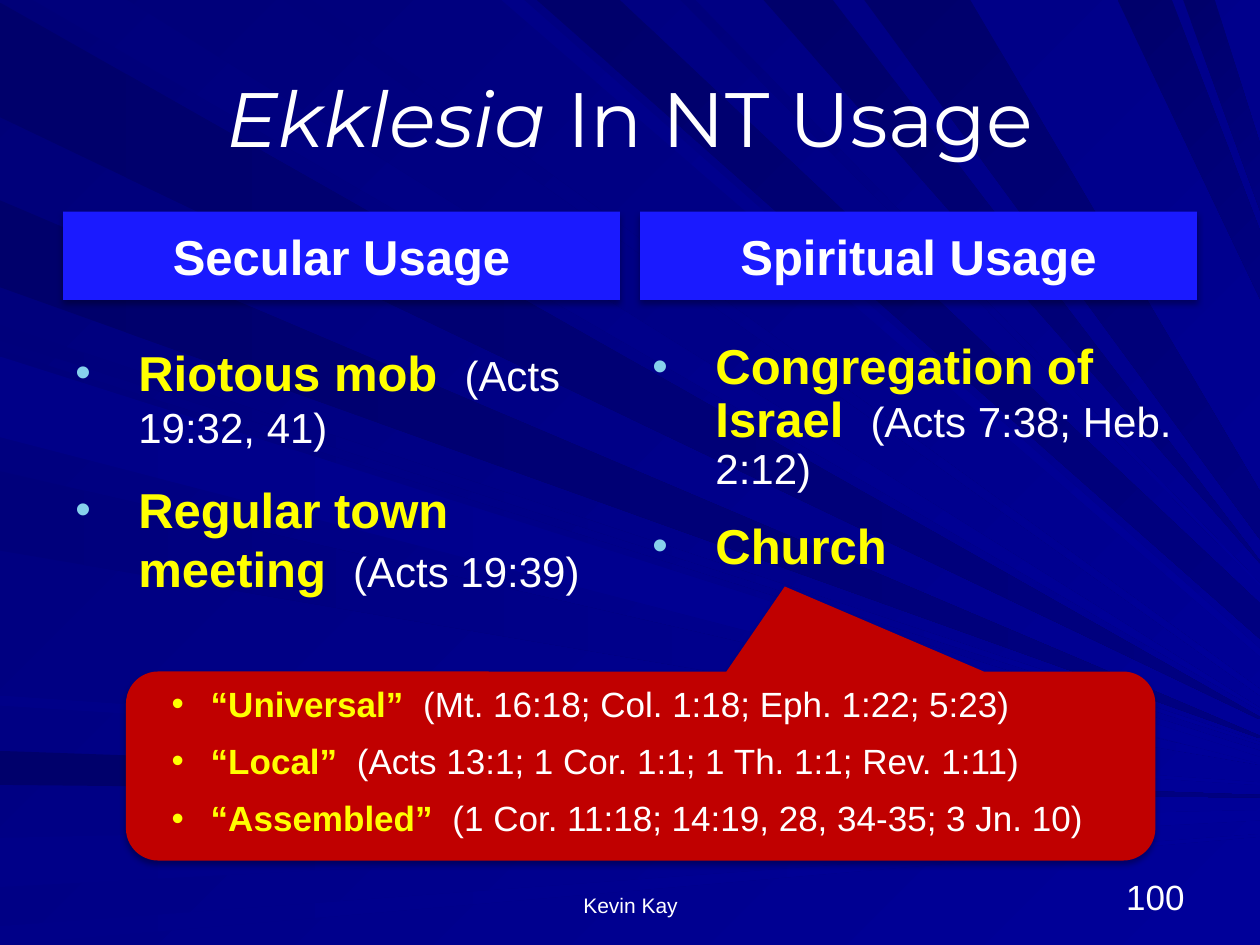
from dataclasses import dataclass
from typing import Optional

from lxml import etree
from pptx import Presentation
from pptx.dml.color import RGBColor
from pptx.enum import shapes, text
from pptx.oxml.ns import qn
from pptx.util import Emu, Pt

PX = 9144  # 100 px to the inch
WIDTH, HEIGHT = 1000, 750

WHITE = RGBColor(0xFF, 0xFF, 0xFF)
YELLOW = RGBColor(0xFF, 0xFF, 0x00)
SKY = RGBColor(0x86, 0xD1, 0xEC)
HEADING_BLUE = RGBColor(0x1A, 0x1A, 0xFF)
RED = RGBColor(0xC0, 0x00, 0x00)
NIGHT = RGBColor(0x00, 0x00, 0x78)
BRIGHT = RGBColor(0x00, 0x00, 0x99)
DARK = (RGBColor(0x00, 0x00, 0x6B), RGBColor(0x00, 0x00, 0x80))
LIGHT = (RGBColor(0x00, 0x00, 0x7B), BRIGHT)
GLOW = (RGBColor(0x00, 0x00, 0x88), BRIGHT)


@dataclass
class Beam:
    """Runs from a stretch of the left or top edge to a point on the right edge."""
    first: int
    last: int
    meet: int
    shade: tuple
    from_top: bool = False
    spread: int = 2


@dataclass
class Box:
    left: int
    top: int
    width: int
    height: int

    def emu(self) -> list:
        return [Emu(v * PX) for v in (self.left, self.top, self.width, self.height)]


@dataclass
class Words:
    text: str
    size: int
    color: RGBColor = WHITE
    bold: bool = False
    italic: bool = False
    font: str = "Arial"


@dataclass
class Bullets:
    indent: int
    hanging: int
    after: int
    spacing: Optional[float] = None
    color: Optional[RGBColor] = None
    percent: int = 100


# Light beams of the backdrop, from back to front
BEAMS = [
    Beam(2, 93, 569, DARK),
    Beam(26, 101, 562, LIGHT, from_top=True),
    Beam(596, 623, 631, DARK),
    Beam(665, 704, 643, GLOW, spread=8),
    Beam(735, 750, 662, GLOW),
    Beam(258, 270, 589, LIGHT),
    Beam(159, 228, 584, DARK),
    Beam(398, 416, 515, GLOW, from_top=True, spread=6),
    Beam(426, 492, 479, DARK, from_top=True, spread=28),
    Beam(540, 552, 463, LIGHT, from_top=True),
    Beam(606, 661, 445, DARK, from_top=True),
    Beam(887, 930, 183, DARK, from_top=True, spread=54),
    Beam(939, 964, 114, DARK, from_top=True, spread=53),
    Beam(278, 342, 596, LIGHT, spread=6),
    Beam(374, 437, 605, LIGHT),
    Beam(552, 560, 621, GLOW),
    Beam(225, 247, 547, LIGHT, from_top=True, spread=5),
    Beam(686, 770, 390, DARK, from_top=True, spread=38),
    Beam(283, 347, 601, GLOW, spread=5),
]


def paint(fill, start: RGBColor, end: Optional[RGBColor] = None, angle: int = 0) -> None:
    if end is None:
        fill.solid()
        fill.fore_color.rgb = start
        return
    fill.gradient()
    fill.gradient_angle = 360 - angle
    for stop, color in zip(fill.gradient_stops, (start, end)):
        stop.color.rgb = color


def draw_beam(slide, beam: Beam) -> None:
    root = [(v, 0) if beam.from_top else (0, v) for v in (beam.last, beam.first)]
    if not beam.from_top:
        root.reverse()
    tip = [(WIDTH, beam.meet), (WIDTH, beam.meet + beam.spread)]
    builder = slide.shapes.build_freeform(*root[0], scale=PX)
    builder.add_line_segments(tip + root[1:], close=True)
    ray = builder.convert_to_shape()
    ray.shadow.inherit = False
    ray.line.fill.background()
    paint(ray.fill, *beam.shade, angle=45 if beam.from_top else 0)


def add_bullet(paragraph, style: Bullets) -> None:
    props = paragraph._p.get_or_add_pPr()
    props.set("marL", str(style.indent * PX))
    props.set("indent", str(-style.hanging * PX))
    if style.color is not None:
        tint = etree.SubElement(props, qn("a:buClr"))
        etree.SubElement(tint, qn("a:srgbClr"), val=str(style.color))
    etree.SubElement(props, qn("a:buSzPct"), val=str(style.percent * 1000))
    etree.SubElement(props, qn("a:buFont"), typeface="Arial")
    etree.SubElement(props, qn("a:buChar"), char="•")
    paragraph.space_after = Pt(style.after)
    if style.spacing:
        paragraph.line_spacing = style.spacing


def write(shape, lines: list, align=text.PP_ALIGN.LEFT, anchor=text.MSO_ANCHOR.TOP,
          bullets: Optional[Bullets] = None) -> None:
    frame = shape.text_frame
    frame.word_wrap = True
    frame.vertical_anchor = anchor
    for index, line in enumerate(lines):
        paragraph = frame.add_paragraph() if index else frame.paragraphs[0]
        paragraph.alignment = align
        if bullets:
            add_bullet(paragraph, bullets)
        for words in line:
            run = paragraph.add_run()
            run.text = words.text
            run.font.size, run.font.name = Pt(words.size), words.font
            run.font.bold, run.font.italic = words.bold, words.italic
            run.font.color.rgb = words.color


def add_panel(slide, kind, box: Box, color: RGBColor):
    panel = slide.shapes.add_shape(kind, *box.emu())
    paint(panel.fill, color)
    panel.line.fill.background()
    panel.shadow.inherit = False
    effects = panel._element.spPr.find(qn("a:effectLst"))
    shadow = etree.SubElement(effects, qn("a:outerShdw"), blurRad=str(int(Pt(3.5))),
                              dist=str(int(Pt(2.2))), dir="5400000", rotWithShape="0")
    black = etree.SubElement(shadow, qn("a:srgbClr"), val="000000")
    etree.SubElement(black, qn("a:alpha"), val="32000")
    return panel


def point(term: str, verses: str = "", size: int = 28, verse_size: int = 24) -> list:
    if not verses:
        return [Words(term, size, YELLOW, bold=True)]
    return [Words(term + "  ", size, YELLOW, bold=True), Words(verses, verse_size)]


def main() -> None:
    deck = Presentation()
    deck.slide_width, deck.slide_height = Emu(WIDTH * PX), Emu(HEIGHT * PX)
    slide = deck.slides.add_slide(deck.slide_layouts[6])
    center, right = text.PP_ALIGN.CENTER, text.PP_ALIGN.RIGHT
    middle, bottom = text.MSO_ANCHOR.MIDDLE, text.MSO_ANCHOR.BOTTOM

    # Backdrop
    paint(slide.background.fill, NIGHT, BRIGHT, 45)
    for beam in BEAMS:
        draw_beam(slide, beam)

    # Title
    title = slide.shapes.add_textbox(*Box(50, 30, 900, 125).emu())
    write(title, [[Words("Ekklesia", 44, italic=True, font="Montserrat"),
                   Words(" In NT Usage", 44, font="Montserrat")]], center, middle)

    # Two columns: heading and points
    columns = [
        (50, "Secular Usage", None, [point("Riotous mob", "(Acts 19:32, 41)"),
                                     point("Regular town meeting", "(Acts 19:39)")]),
        (508, "Spiritual Usage", 0.9, [point("Congregation of Israel", "(Acts 7:38; Heb. 2:12)"),
                                       point("Church")]),
    ]
    for left, heading, spacing, points in columns:
        banner = add_panel(slide, shapes.MSO_SHAPE.RECTANGLE, Box(left, 168, 442, 70), HEADING_BLUE)
        write(banner, [[Words(heading, 28, bold=True)]], center, middle)
        body = slide.shapes.add_textbox(*Box(left, 267, 442, 403).emu())
        write(body, points, bullets=Bullets(50, 50, 16, spacing, SKY, 90))

    # Callout on the senses of "church"
    callout = add_panel(slide, shapes.MSO_SHAPE.ROUNDED_RECTANGULAR_CALLOUT,
                        Box(100, 533, 817, 150), RED)
    for index, value in enumerate((0.14, -0.95, 0.17)):
        callout.adjustments[index] = value
    senses = [("“Universal”", "(Mt. 16:18; Col. 1:18; Eph. 1:22; 5:23)"),
              ("“Local”", "(Acts 13:1; 1 Cor. 1:1; 1 Th. 1:1; Rev. 1:11)"),
              ("“Assembled”", "(1 Cor. 11:18; 14:19, 28, 34-35; 3 Jn. 10)")]
    write(callout, [point(term, verses, 20, 20) for term, verses in senses],
          bullets=Bullets(50, 31, 11, 0.9))

    # Footer
    for box, label, size, align in [(Box(717, 683, 233, 50), "100", 20, right),
                                    (Box(342, 683, 317, 50), "Kevin Kay", 12, center)]:
        write(slide.shapes.add_textbox(*box.emu()), [[Words(label, size)]], align, bottom)

    deck.save("out.pptx")


if __name__ == "__main__":
    main()
